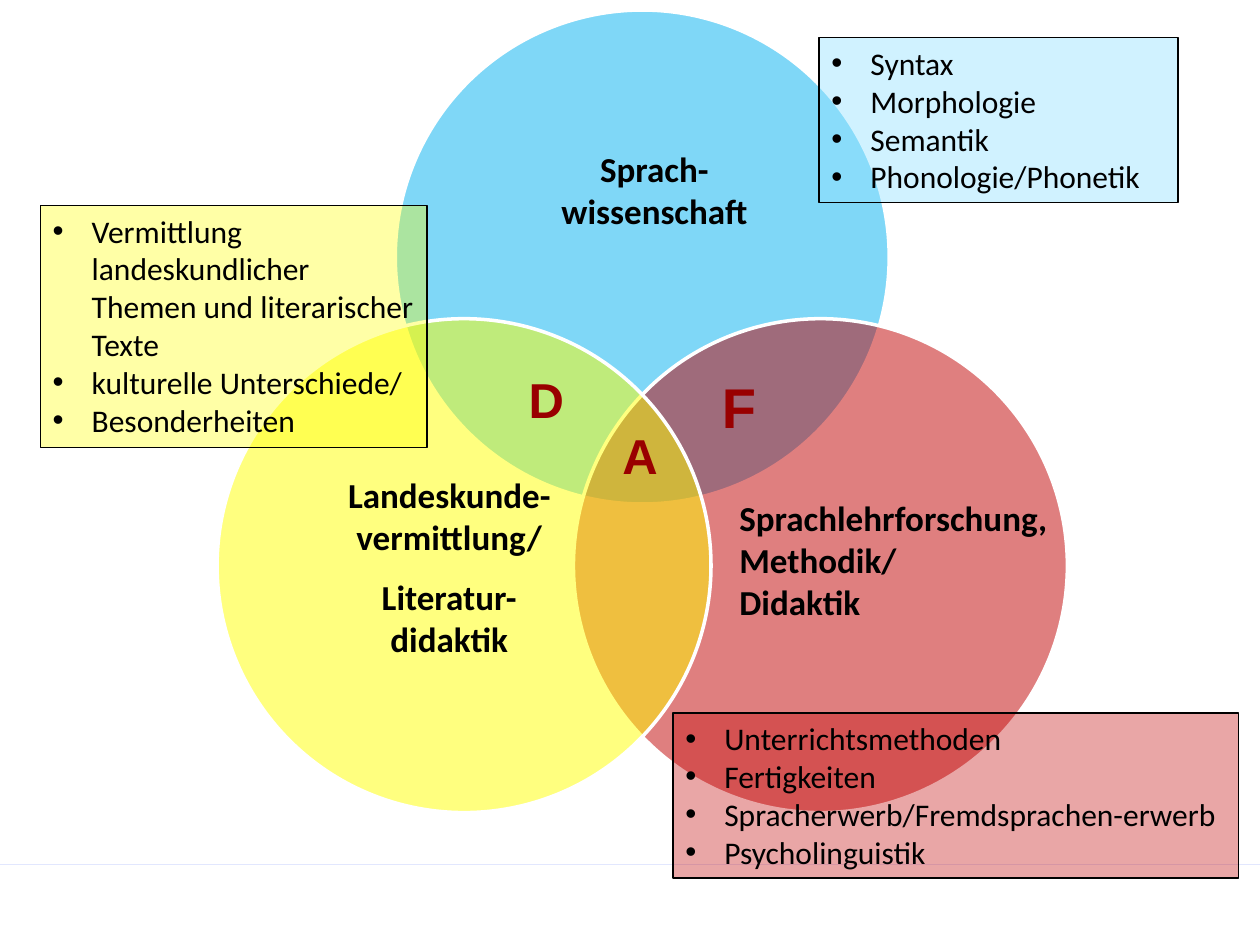
from math import cos, radians, sin

from lxml.etree import SubElement
from pptx import Presentation
from pptx.dml.color import RGBColor
from pptx.enum.shapes import MSO_CONNECTOR, MSO_SHAPE
from pptx.enum.text import MSO_ANCHOR, PP_ALIGN
from pptx.oxml.ns import qn
from pptx.util import Inches, Pt

COLUMNS, ROWS = 100, 75


def color(hex_string):
    return RGBColor.from_string(hex_string)


def write(frame, text, font="Calibri", size=20, bold=True, ink="000000",
          align=PP_ALIGN.CENTER, gap=0, bullet=False):
    """Fill a text frame; each line of the text becomes a paragraph."""
    frame.word_wrap = True
    frame.vertical_anchor = MSO_ANCHOR.TOP
    for index, line in enumerate(text.split("\n")):
        para = frame.paragraphs[0] if index == 0 else frame.add_paragraph()
        if bullet:
            properties = para._p.get_or_add_pPr()
            properties.set("marL", str(Inches(0.31)))
            properties.set("indent", str(-Inches(0.31)))
            SubElement(properties, qn("a:buFont"), typeface="Arial")
            SubElement(properties, qn("a:buChar"), char="•")
        para.alignment = align
        if index and gap:
            para.space_before = Pt(gap)
        span = para.add_run()
        span.text = line
        span.font.name = font
        span.font.size = Pt(size)
        span.font.bold = bold
        span.font.color.rgb = color(ink)


class VennPage:
    """Holds the style and the page; lengths are grid columns and rows."""

    letter_style = dict(font="Arial", ink="990000")
    list_style = dict(size=18, bold=False, align=PP_ALIGN.LEFT, bullet=True)

    def __init__(self, deck):
        self.page = deck.slides.add_slide(deck.slide_layouts[6])
        self.column = deck.slide_width / COLUMNS
        self.row = deck.slide_height / ROWS

    def place(self, left, top, width, height):
        return (round(left * self.column), round(top * self.row),
                round(width * self.column), round(height * self.row))

    def rule(self, row):
        y = round(row * self.row)
        line = self.page.shapes.add_connector(
            MSO_CONNECTOR.STRAIGHT, 0, y, round(COLUMNS * self.column), y)
        line.line.color.rgb = color("E2E7FE")
        line.line.width = Pt(0.75)
        SubElement(line._element.spPr, qn("a:effectLst"))

    def area(self, kind, at, fill, opacity, outline, weight):
        shape = self.page.shapes.add_shape(kind, *self.place(*at))
        shape.shadow.inherit = False
        shape.fill.solid()
        shape.fill.fore_color.rgb = color(fill)
        tint = shape._element.spPr.find(qn("a:solidFill"))[0]
        SubElement(tint, qn("a:alpha"), val=str(opacity * 1000))
        shape.line.color.rgb = color(outline)
        shape.line.width = Pt(weight)
        return shape

    def circle(self, x, y, diameter, fill):
        at = (x - diameter / 2, y - diameter / 2, diameter, diameter)
        self.area(MSO_SHAPE.OVAL, at, fill, 50, "FFFFFF", 2)

    def label(self, at, text, **style):
        box = self.page.shapes.add_textbox(*self.place(*at))
        write(box.text_frame, text, **style)

    def letter(self, at, text, size=28, **style):
        self.label(at, text, size=size, **self.letter_style, **style)

    def topics(self, at, text, fill, opacity):
        box = self.area(MSO_SHAPE.RECTANGLE, at, fill, opacity, "000000", 0.75)
        write(box.text_frame, text, **self.list_style)


def main():
    deck = Presentation()
    deck.slide_width, deck.slide_height = Inches(10), Inches(7.5)
    venn = VennPage(deck)
    venn.rule(68.6)

    # Three circles, a third of a turn apart around a common centre
    for angle, fill in ((-90, "00B0F0"), (30, "C00000"), (150, "FFFF00")):
        venn.circle(50.97 + 16.33 * cos(radians(angle)),
                    36.73 + 16.33 * sin(radians(angle)), 39.2, fill)

    # Field names and the letters of the overlaps
    venn.label((42.1, 11.2, 19.7, 7.7), "Sprach-\nwissenschaft")
    venn.letter((40.6, 28.8, 5.5, 5.7), "D")
    venn.letter((48.4, 33.3, 3.9, 5.7), "A", align=PP_ALIGN.LEFT)
    venn.letter((56.3, 29.1, 4.7, 6.4), "F", size=32)
    venn.label((25.2, 37.1, 20.9, 16.2),
               "Landeskunde-vermittlung/\nLiteratur-didaktik", gap=10)
    venn.label((57.7, 38.9, 30, 11.1),
               "Sprachlehrforschung, Methodik/\nDidaktik", align=PP_ALIGN.LEFT)

    # Topic lists
    venn.topics((3.2, 16.3, 30.7, 19.2),
                "Vermittlung landeskundlicher Themen und literarischer Texte\n"
                "kulturelle Unterschiede/\nBesonderheiten", "FFFF00", 35)
    venn.topics((53.4, 56.6, 44.9, 13.1),
                "Unterrichtsmethoden\nFertigkeiten\n"
                "Spracherwerb/Fremdsprachen-erwerb\nPsycholinguistik",
                "C00000", 35)
    venn.topics((65, 3, 28.5, 13.1),
                "Syntax\nMorphologie\nSemantik\nPhonologie/Phonetik",
                "97E4FF", 45)

    deck.save("out.pptx")


if __name__ == "__main__":
    main()
